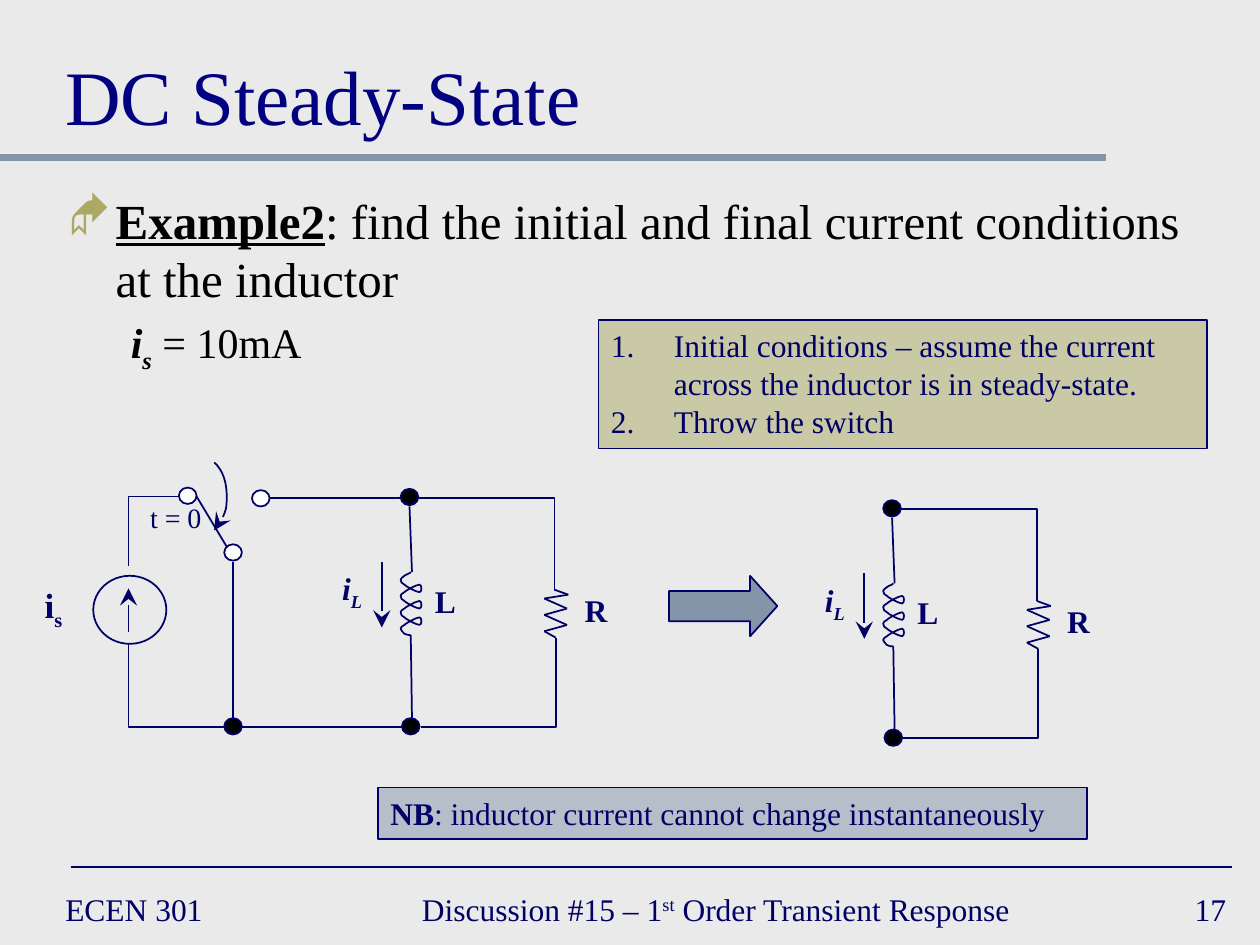
from itertools import pairwise

from lxml import etree
from pptx import Presentation
from pptx.dml.color import RGBColor
from pptx.enum import shapes, text
from pptx.oxml import ns
from pptx.util import Inches, Pt

HUES = {"back": "EAEAEA", "navy": "000066", "title": "000080", "black": "000000",
        "white": "FFFFFF", "slate": "8495A9", "olive": "ACA964"}
FONT = "Times New Roman"
SHIFT = 3.83, 0.09
DOT = 0.14, 0.13
BASE = {"sub": "-25000", "sup": "30000"}
LEFT, MID, RIGHT = text.PP_ALIGN.LEFT, text.PP_ALIGN.CENTER, text.PP_ALIGN.RIGHT
TOP, CORE, LOW = (text.MSO_ANCHOR.TOP, text.MSO_ANCHOR.MIDDLE,
                  text.MSO_ANCHOR.BOTTOM)


def color(key):
    return RGBColor.from_string(HUES[key])


def child(node, tag, **attrs):
    return etree.SubElement(node, ns.qn(tag), attrs)


def ink(item, width=1, hue="navy", head=False):
    """Style the line of a shape or connector."""
    item.line.color.rgb = color(hue)
    item.line.width = Pt(width)
    if head:
        child(item.line._get_or_add_ln(), "a:tailEnd", type="stealth", w="lg", len="lg")


def wire(slide, start, end, bent=False, **style):
    """Draw a connector; a bent one runs level first, then upright."""
    kind = shapes.MSO_CONNECTOR.ELBOW if bent else shapes.MSO_CONNECTOR.STRAIGHT
    item = slide.shapes.add_connector(kind, *map(Inches, start + end))
    props = item._element.spPr
    if bent:
        props.find(ns.qn("a:prstGeom")).set("prst", "bentConnector2")
    ink(item, **style)
    child(props, "a:effectLst")


def block(slide, kind, box, fill=None, clear=False):
    item = slide.shapes.add_shape(kind, *map(Inches, box))
    item.shadow.inherit = False
    ink(item)
    if fill:
        item.fill.solid()
        item.fill.fore_color.rgb = color(fill)
    else:
        item.fill.background()
    if clear:
        tone = item.fill._xPr.find(ns.qn("a:solidFill"))[0]
        child(tone, "a:alpha", val="50000")
    return item


def dot(slide, x, y, fill="black"):
    block(slide, shapes.MSO_SHAPE.OVAL, (x, y) + DOT, fill)


def curve(slide, start, parts, **style):
    """Draw an open line through cubic curves, each (control, control, end)."""
    pen = slide.shapes.build_freeform(*map(Inches, start))
    pen.add_line_segments([tuple(map(Inches, spot)) for part in parts for spot in part],
                          close=False)
    item = pen.convert_to_shape()
    track = next(item._element.iter(ns.qn("a:path")))
    legs = track.findall(ns.qn("a:lnTo"))
    for at in range(0, len(legs), 3):
        bend = child(track, "a:cubicBezTo")
        for leg in legs[at:at + 3]:
            bend.append(leg[0])
            track.remove(leg)
    item.shadow.inherit = False
    item.fill.background()
    ink(item, **style)


def write(para, runs, size, hue="navy", align=LEFT):
    """Fill a paragraph with (wording, marks) runs."""
    para.alignment = align
    for words, marks in runs:
        run = para.add_run()
        run.text = words
        font = run.font
        font.name, font.size = FONT, Pt(size)
        font.color.rgb = color(hue)
        font.bold, font.italic = "b" in marks, "i" in marks
        font.underline = "u" in marks
        for mark in BASE.keys() & set(marks):
            run._r.get_or_add_rPr().set("baseline", BASE[mark])


def label(slide, box, runs, size=18, hue="navy", align=MID, anchor=TOP, wrap=False):
    frame = slide.shapes.add_textbox(*map(Inches, box)).text_frame
    frame.word_wrap = wrap
    frame.vertical_anchor = anchor
    write(frame.paragraphs[0], runs, size, hue, align)
    return frame


def indent(para, left, hang):
    props = para._p.get_or_add_pPr()
    props.set("marL", str(Inches(left)))
    props.set("indent", str(Inches(-hang)))
    return props


def note(slide, box, fill, lines, count=False):
    """Draw a tinted box of text, its lines numbered on request."""
    frame = block(slide, shapes.MSO_SHAPE.RECTANGLE, box, fill, True).text_frame
    frame.word_wrap = True
    frame.vertical_anchor = TOP
    for at, runs in enumerate(lines):
        para = frame.add_paragraph() if at else frame.paragraphs[0]
        if count:
            child(indent(para, 0.5, 0.5), "a:buAutoNum", type="arabicPeriod")
        write(para, runs, 18)


def coil(slide, x, y):
    def bend(top, *spots):
        return [(x + a, y + top + b) for a, b in spots]

    parts = [bend(0, (0.08, 0.01), (0.04, 0.02), (0.03, 0.03)),
             bend(0, (0.02, 0.04), (0, 0.05), (0, 0.06))]
    for turn in range(3):
        top = 0.06 + 0.13 * turn
        parts += [bend(top, (0, 0.02), (0.01, 0.03), (0.03, 0.04)),
                  bend(top, (0.05, 0.06), (0.13, 0.1), (0.15, 0.1)),
                  bend(top, (0.17, 0.1), (0.17, 0.04), (0.15, 0.04)),
                  bend(top, (0.13, 0.04), (0.05, 0.08), (0.03, 0.1)),
                  bend(top, (0.01, 0.11), (0, 0.12), (0, 0.13))]
    parts += [bend(0, (0, 0.46), (0.02, 0.48), (0.03, 0.49)),
              bend(0, (0.04, 0.5), (0.07, 0.5), (0.08, 0.5))]
    curve(slide, (x + 0.08, y), parts)


def load(slide, dx=0, dy=0):
    """Draw the inductor and the resistor beside it."""
    def at(x, y, *size):
        return (x + dx, y + dy) + size

    dot(slide, *at(3.18, 3.88))
    dot(slide, *at(3.19, 5.7))
    wire(slide, at(3.25, 4.02), at(3.27, 4.54))
    wire(slide, at(3.27, 5.7), at(3.26, 5.04))
    coil(slide, *at(3.18, 4.54))
    wire(slide, at(3.32, 3.95), at(4.4, 4.68), bent=True)
    wire(slide, at(3.34, 5.77), at(4.41, 5.06), bent=True)
    zigzag = [(4.4, 4.68), (4.51, 4.72), (4.32, 4.75), (4.5, 4.83),
              (4.32, 4.88), (4.5, 4.96), (4.32, 5.01), (4.41, 5.06)]
    for start, end in pairwise(zigzag):
        wire(slide, at(*start), at(*end))
    wire(slide, at(3.03, 4.46), at(3.03, 4.98), head=True)
    label(slide, at(2.61, 4.47, 0.37, 0.4), [("i", "bi"), ("L", ["b", "i", "sub"])])
    label(slide, at(3.35, 4.57, 0.37, 0.4), [("L", "b")])
    label(slide, at(4.54, 4.64, 0.38, 0.4), [("R", "b")])


def source(slide):
    """Draw the current source and the switch."""
    wire(slide, (1.78, 5.77), (1.02, 5.11), bent=True)
    wire(slide, (1.42, 3.94), (1.02, 4.49), bent=True)
    block(slide, shapes.MSO_SHAPE.OVAL, (0.74, 4.57, 0.58, 0.54))
    wire(slide, (1.02, 5.02), (1.02, 4.67), head=True)
    label(slide, (0.25, 4.58, 0.35, 0.43), [("i", "b"), ("s", ["b", "sub"])], 20)
    for spot in ((1.42, 3.87), (2, 3.89), (1.78, 4.32)):
        dot(slide, *spot, "white")
    dot(slide, 1.78, 5.7)
    for start, end in (((3.18, 3.95), (2.14, 3.95)), ((1.92, 5.77), (3.19, 5.77)),
                       ((1.85, 5.7), (1.85, 4.46)), ((1.8, 4.34), (1.56, 3.94))):
        wire(slide, start, end)
    curve(slide, (1.7, 3.67), [((1.77, 3.73), (1.8, 3.83), (1.8, 3.94)),
                               ((1.8, 4.04), (1.77, 4.14), (1.7, 4.21))], head=True)
    label(slide, (1.09, 3.92, 0.61, 0.37), [("t = 0", "")], 16)


def frame(slide):
    """Draw the title, the rules and the footer."""
    wire(slide, (0, 1.25), (8.78, 1.25), width=4, hue="slate")
    wire(slide, (0.56, 6.88), (9.78, 6.88))
    label(slide, (0.42, 0.17, 9.17, 1), [("DC Steady-State", "")], 44, "title", LEFT, LOW, True)
    topic = [("Discussion #15 – 1", ""), ("st", ["sup"]), (" Order Transient Response", "")]
    for x, wide, runs, align in ((0.42, 2.17, [("ECEN 301", "")], LEFT),
                                 (3.25, 4.9, topic, LEFT),
                                 (7.75, 2.08, [("17", "")], RIGHT)):
        label(slide, (x, 7, wide, 0.42), runs, align=align, anchor=CORE)


def task(slide):
    body = label(slide, (0.44, 1.46, 9.14, 1.54),
                 [("Example2", "bu"),
                  (": find the initial and final current conditions at the inductor", "")],
                 28, "black", LEFT, wrap=True)
    props = indent(body.paragraphs[0], 0.38, 0.38)
    child(child(props, "a:buClr"), "a:srgbClr", val=HUES["olive"])
    child(props, "a:buFont", typeface="Wingdings")
    child(props, "a:buChar", char="◆")
    para = body.add_paragraph()
    para.level = 1
    indent(para, 0.81, 0.31)
    para.space_before = Pt(5)
    write(para, [("i", "bi"), ("s", ["b", "i", "sub"]), (" = 10mA", "")], 24, "black")


def main():
    deck = Presentation()
    deck.slide_width, deck.slide_height = Inches(10), Inches(7.5)
    slide = deck.slides.add_slide(deck.slide_layouts[6])
    slide.background.fill.solid()
    slide.background.fill.fore_color.rgb = color("back")
    frame(slide)
    task(slide)
    full = slide.shapes.add_group_shape()
    source(full)
    load(full)
    note(slide, (4.75, 2.54, 4.83, 1.02), "olive",
         [[("Initial conditions – assume the current across the inductor "
            "is in steady-state.", "")], [("Throw the switch", "")]], count=True)
    note(slide, (3, 6.25, 5.63, 0.41), "slate",
         [[("NB", "b"), (": inductor current cannot change instantaneously", "")]])
    load(slide.shapes.add_group_shape(), *SHIFT)
    arrow = block(slide, shapes.MSO_SHAPE.RIGHT_ARROW, (5.31, 4.57, 0.86, 0.48), "slate")
    arrow.adjustments[1] = 0.45
    deck.save("out.pptx")


if __name__ == "__main__":
    main()
